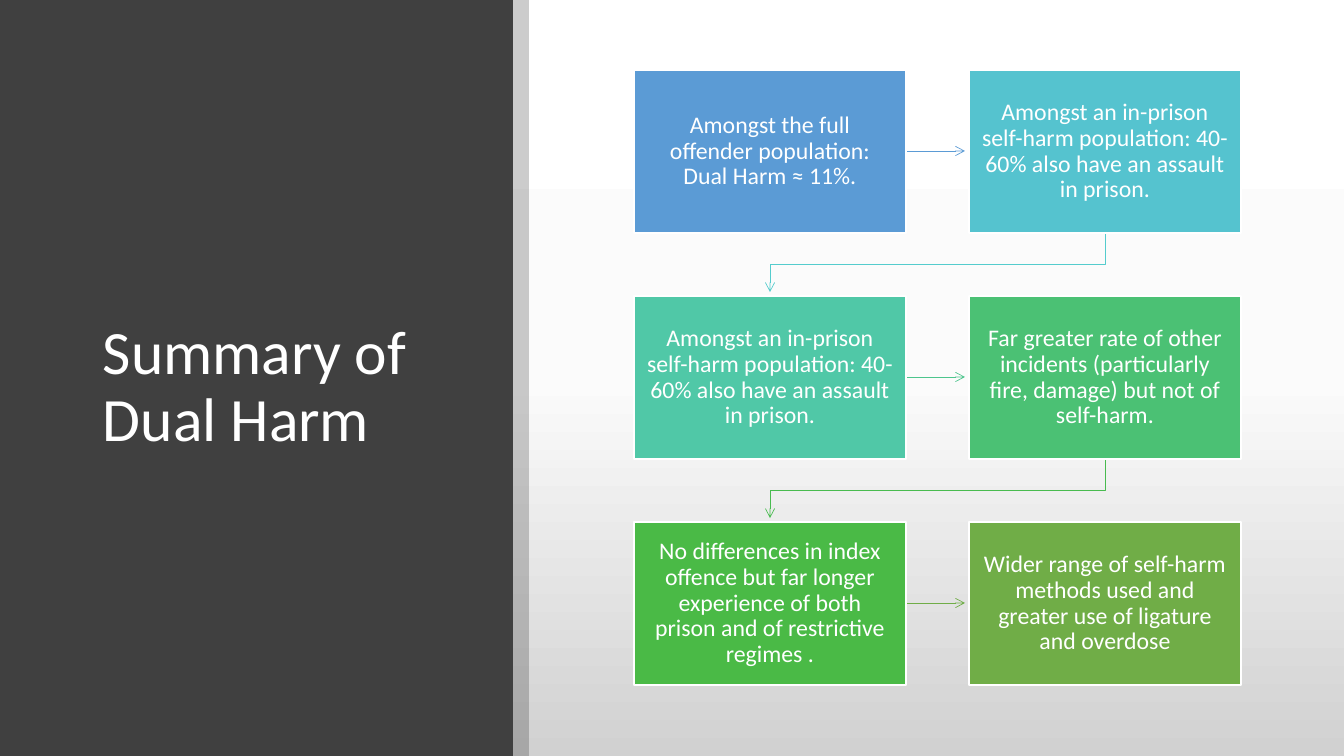
from copy import deepcopy

from lxml.etree import SubElement
from pptx import Presentation
from pptx.dml.color import RGBColor
from pptx.enum.shapes import MSO_CONNECTOR, MSO_SHAPE
from pptx.enum.text import MSO_ANCHOR, PP_ALIGN
from pptx.oxml.ns import qn
from pptx.util import Pt

EMU_PER_PX = 914400 / 100.8
SLIDE_W, SLIDE_H = 1344, 756
PANEL_W, BAND_W = 513, 16
LEFT, TOP = 634, 70
STEP_X, STEP_Y = 335, 226
BOX_W, BOX_H = 272, 163
ARROW_LENGTH, BEND = 59, 31

COLOURS = {
    "panel": "404040",
    "band": "000000",
    "text": "FFFFFF",
    "border": "FFFFFF",
}
BACKDROP = [(0, "FFFFFF"), (0.5, "FBFBFB"), (1, "D1D1D1")]

FINDINGS = [
    ("Amongst the full offender population: Dual Harm ≈ 11%.", "5B9BD5", "5B9BD5"),
    ("Amongst an in-prison self-harm population: 40-60% also have an assault in prison.",
     "55C3CF", "54CCCD"),
    ("Amongst an in-prison self-harm population: 40-60% also have an assault in prison.",
     "50C8A7", "4DC58D"),
    ("Far greater rate of other incidents (particularly fire, damage) but not of self-harm.",
     "4BC174", "48BB4F"),
    ("No differences in index offence but far longer experience of both prison and of "
     "restrictive regimes .", "4ABA46", "70AD47"),
    ("Wider range of self-harm methods used and greater use of ligature and overdose",
     "70AD47", None),
]


def px(length):
    return round(length * EMU_PER_PX)


def rgb(colour):
    return RGBColor.from_string(colour)


def paint_backdrop(slide):
    fill = slide.background.fill
    fill.gradient()
    fill.gradient_angle = 270
    stop_list = next(slide.element.iter(qn("a:gsLst")))
    stop_list.append(deepcopy(stop_list[0]))
    for stop, (position, colour) in zip(fill.gradient_stops, BACKDROP):
        stop.position = position
        stop.color.rgb = rgb(colour)


def add_block(slide, x, y, width, height, colour):
    block = slide.shapes.add_shape(
        MSO_SHAPE.RECTANGLE, px(x), px(y), px(width), px(height))
    block.shadow.inherit = False
    block.fill.solid()
    block.fill.fore_color.rgb = rgb(colour)
    block.line.fill.background()
    return block


def write(frame, text, size, align):
    frame.word_wrap = True
    frame.vertical_anchor = MSO_ANCHOR.MIDDLE
    frame.text = text
    paragraph = frame.paragraphs[0]
    paragraph.alignment = align
    paragraph.line_spacing = 0.9
    font = paragraph.runs[0].font
    font.name = "Calibri"
    font.size = Pt(size)
    font.color.rgb = rgb(COLOURS["text"])


def add_finding(slide, x, y, text, colour):
    finding = add_block(slide, x, y, BOX_W, BOX_H, colour)
    finding.line.color.rgb = rgb(COLOURS["border"])
    finding.line.width = Pt(1)
    frame = finding.text_frame
    frame.margin_left = frame.margin_right = px(13)
    frame.margin_top = frame.margin_bottom = px(14)
    write(frame, text, 17, PP_ALIGN.CENTER)


def style_arrow(arrow, colour):
    arrow.line.color.rgb = rgb(colour)
    arrow.line.width = Pt(0.5)
    SubElement(arrow.line._get_or_add_ln(), qn("a:tailEnd"), type="arrow")


def add_across_arrow(slide, x, y, colour):
    start, middle = x + BOX_W, y + BOX_H // 2
    arrow = slide.shapes.add_connector(
        MSO_CONNECTOR.STRAIGHT, px(start), px(middle), px(start + ARROW_LENGTH), px(middle))
    style_arrow(arrow, colour)
    SubElement(arrow._element.spPr, qn("a:effectLst"))


def add_return_arrow(slide, x, y, colour):
    start_x, start_y = x + BOX_W // 2, y + BOX_H
    end_x = start_x - STEP_X
    outline = slide.shapes.build_freeform(start_x, start_y, scale=EMU_PER_PX)
    outline.add_line_segments([
        (start_x, start_y + BEND),
        (end_x, start_y + BEND),
        (end_x, start_y + ARROW_LENGTH),
    ], close=False)
    arrow = outline.convert_to_shape()
    arrow.shadow.inherit = False
    arrow.fill.background()
    style_arrow(arrow, colour)


def add_title(slide):
    title = slide.shapes.add_textbox(px(93), px(90), px(368), px(596))
    write(title.text_frame, "Summary of Dual Harm", 44, PP_ALIGN.LEFT)


def add_band(slide):
    band = add_block(slide, PANEL_W, 0, BAND_W, SLIDE_H, COLOURS["band"])
    colour = next(band._element.spPr.iter(qn("a:srgbClr")))
    SubElement(colour, qn("a:alpha"), val="20000")


def main():
    deck = Presentation()
    deck.slide_width, deck.slide_height = px(SLIDE_W), px(SLIDE_H)
    slide = deck.slides.add_slide(deck.slide_layouts[6])
    paint_backdrop(slide)
    add_block(slide, 0, 0, PANEL_W, SLIDE_H, COLOURS["panel"])
    add_band(slide)
    add_title(slide)
    for index, (text, colour, arrow_colour) in enumerate(FINDINGS):
        row, column = divmod(index, 2)
        x, y = LEFT + column * STEP_X, TOP + row * STEP_Y
        if arrow_colour:
            add_arrow = add_return_arrow if column else add_across_arrow
            add_arrow(slide, x, y, arrow_colour)
        add_finding(slide, x, y, text, colour)
    deck.save("out.pptx")


if __name__ == "__main__":
    main()
